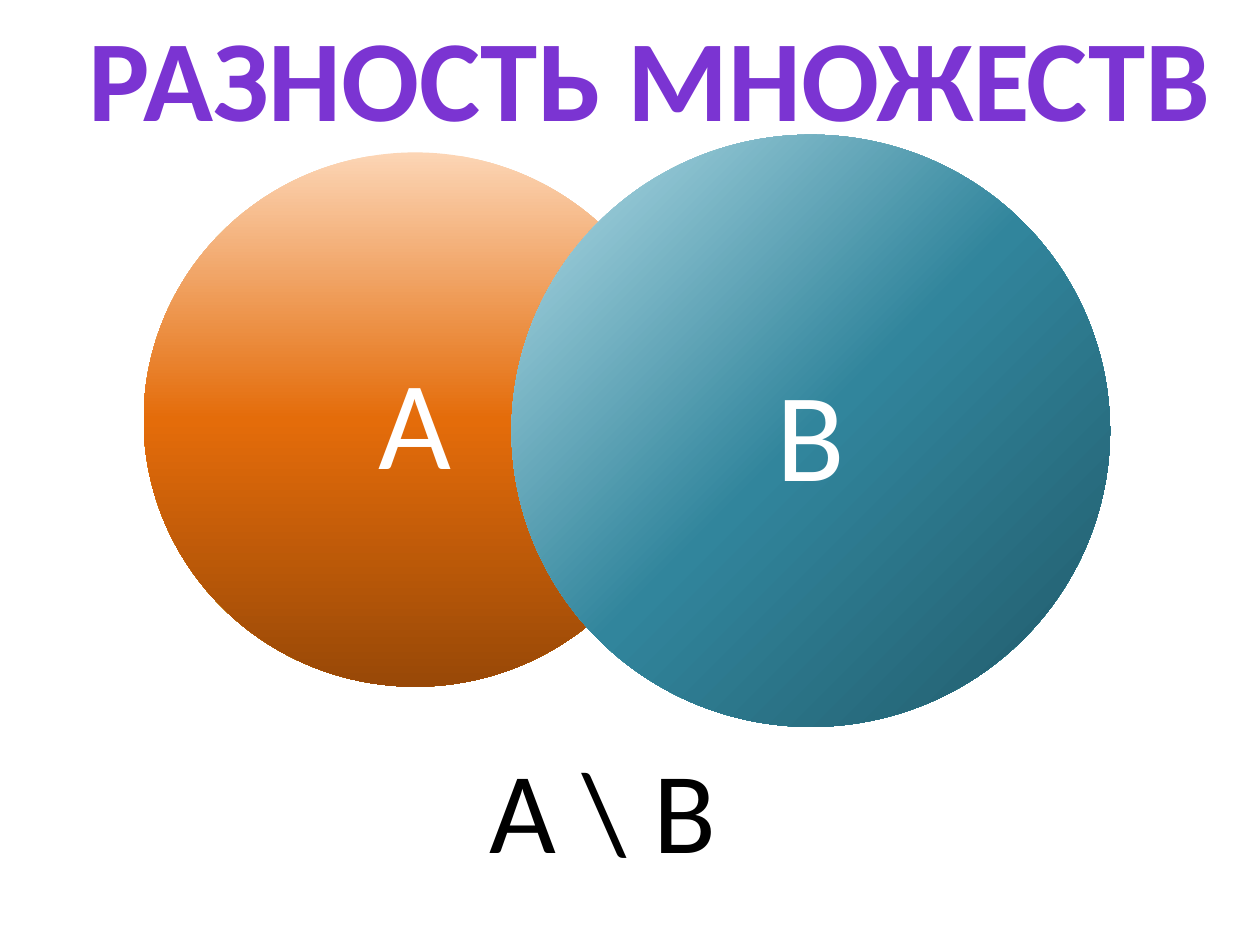
import pptx
import pptx.dml.color
import pptx.enum.shapes
import pptx.enum.text
import pptx.oxml.ns
import pptx.util
import lxml.etree

Pt = pptx.util.Pt
qn = pptx.oxml.ns.qn
ALIGN = pptx.enum.text.PP_ALIGN
ANCHOR = pptx.enum.text.MSO_ANCHOR
AUTO_SIZE = pptx.enum.text.MSO_AUTO_SIZE

COLORS = {
    "title": "7B34D2",
    "label": "FFFFFF",
    "formula": "000000",
    "orange_light": "FCD5B5",
    "orange": "E46C0A",
    "orange_dark": "984807",
    "teal_light": "B7DEE8",
    "teal": "31859C",
    "teal_dark": "215968",
}


def write_text(shape, text, *, size, color, bold=False, align=ALIGN.LEFT,
               anchor=ANCHOR.TOP, wrap=True, auto_size=AUTO_SIZE.NONE):
    frame = shape.text_frame
    frame.text = text
    frame.auto_size = auto_size
    frame.word_wrap = wrap
    frame.vertical_anchor = anchor
    paragraph = frame.paragraphs[0]
    paragraph.alignment = align
    font = paragraph.runs[0].font
    font.name = "Calibri"
    font.size = Pt(size)
    font.bold = bold
    font.color.rgb = pptx.dml.color.RGBColor.from_string(COLORS[color])


def fill_gradient(shape, color_names, clockwise_angle):
    shape.fill.gradient()
    shape.fill.gradient_angle = 360 - clockwise_angle
    stops = shape._element.spPr.find(qn("a:gradFill")).find(qn("a:gsLst"))
    for stop in list(stops):
        stops.remove(stop)
    for index, name in enumerate(color_names):
        position = 100000 * index // (len(color_names) - 1)
        stop = lxml.etree.SubElement(stops, qn("a:gs"), pos=str(position))
        lxml.etree.SubElement(stop, qn("a:srgbClr"), val=COLORS[name])


def place_title(slide, box, text):
    title = slide.shapes.title
    title.left, title.top, title.width, title.height = map(Pt, box)
    write_text(title, text, size=66, color="title", bold=True, align=ALIGN.CENTER,
               wrap=False, auto_size=AUTO_SIZE.SHAPE_TO_FIT_TEXT)


def add_set_circle(slide, box, label, color_names, angle):
    circle = slide.shapes.add_shape(pptx.enum.shapes.MSO_SHAPE.OVAL, *map(Pt, box))
    circle.shadow.inherit = False
    circle.line.fill.background()
    fill_gradient(circle, color_names, angle)
    write_text(circle, label, size=72, color="label", align=ALIGN.CENTER,
               anchor=ANCHOR.MIDDLE)


def add_formula(slide, box, text):
    formula = slide.shapes.add_textbox(*map(Pt, box))
    write_text(formula, text, size=66, color="formula",
               auto_size=AUTO_SIZE.SHAPE_TO_FIT_TEXT)


def main():
    presentation = pptx.Presentation()
    presentation.slide_width = Pt(720)
    presentation.slide_height = Pt(540)
    slide = presentation.slides.add_slide(presentation.slide_layouts[5])
    place_title(slide, (40.3, 0, 661.7, 87.1), "РАЗНОСТЬ МНОЖЕСТВ")
    add_set_circle(slide, (82.1, 87.1, 310.3, 305.3), "А",
                   ("orange_light", "orange", "orange_dark"), 90)
    add_formula(slide, (272.9, 418.3, 174.2, 87.1), "A \\ B")
    add_set_circle(slide, (292.3, 77, 342, 338.4), "В",
                   ("teal_light", "teal", "teal_dark"), 45)
    presentation.save("out.pptx")


if __name__ == "__main__":
    main()
